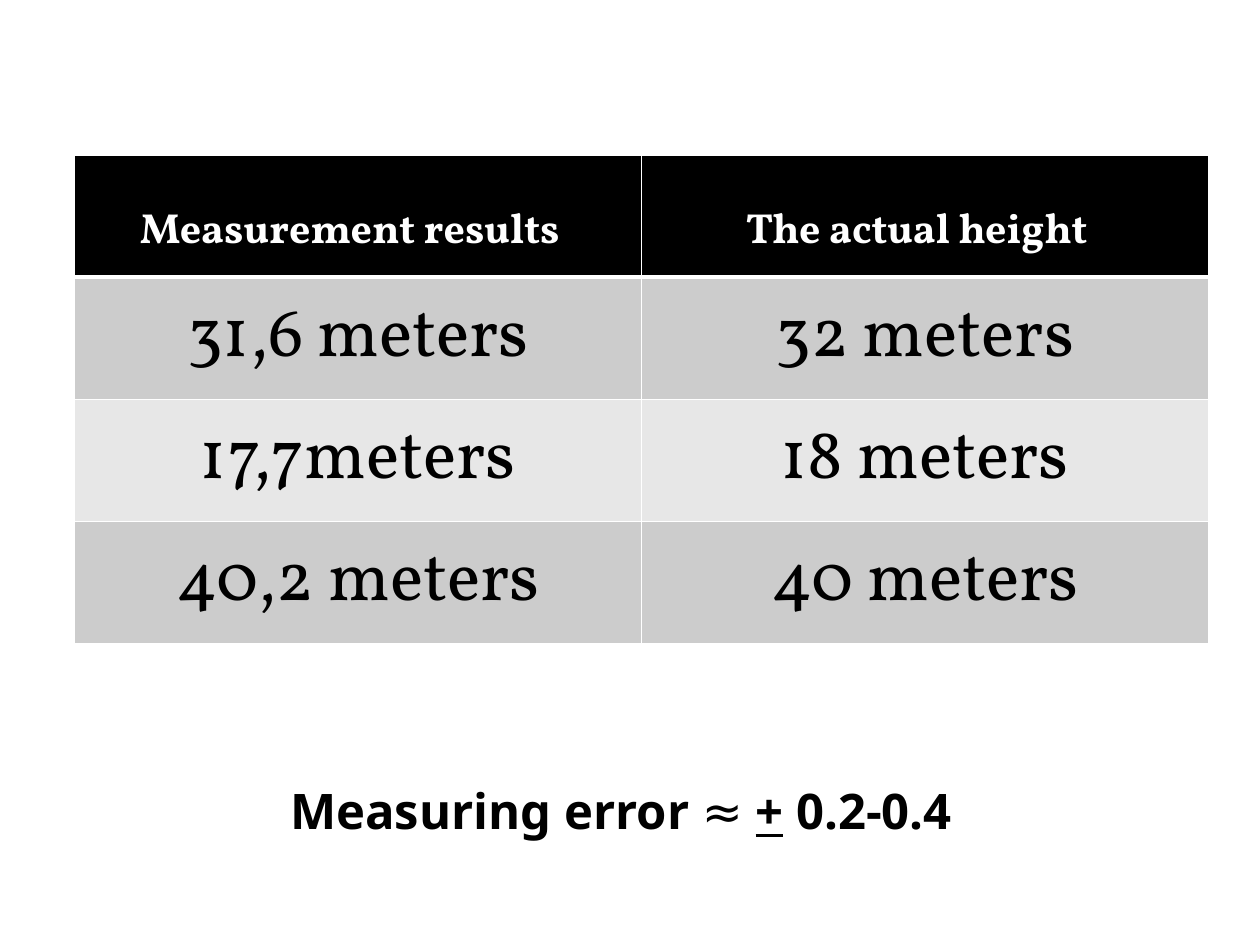
from lxml.etree import SubElement as Sub
from pptx import Presentation
from pptx.dml.color import RGBColor
from pptx.enum.text import MSO_ANCHOR as Anchor, PP_ALIGN as Align
from pptx.oxml.ns import qn
from pptx.util import Inches, Pt

# Content
ROWS = [
    ("Measurement results", "The actual height"),
    ("31,6 meters", "32 meters"),
    ("17,7meters", "18 meters"),
    ("40,2 meters", "40 meters"),
]
# text, bold, underline
ERROR = [
    ("Measuring error ", True, False),
    ("≈ ", False, False),
    ("+", True, True),
    (" 0.2-0.4", True, False),
]
HEAD, BANDS = "000000", ("CCCCCC", "E7E7E7")
COL, ROW = 4.5, 0.97


def color(code):
    return RGBColor.from_string(code)


def style(run, font, size, code, bold, under=False):
    run.font.name, run.font.size = font, Pt(size)
    run.font.bold, run.font.underline = bold, under
    run.font.color.rgb = color(code)


def edge(cell, side, width):
    line = Sub(cell._tc.get_or_add_tcPr(), qn("a:ln" + side), w=str(Pt(width)))
    fill = Sub(line, qn("a:solidFill"))
    Sub(fill, qn("a:srgbClr"), val="FFFFFF")


def dress(cell, text, row):
    head = row == 0
    # Borders come before the fill; a thick rule sits under the header
    for side in "LRTB":
        thick = (row, side) in ((0, "B"), (1, "T"))
        edge(cell, side, 3 if thick else 1)
    cell.fill.solid()
    cell.fill.fore_color.rgb = color(HEAD if head else BANDS[(row - 1) % 2])
    cell.text_frame.text = text
    cell.vertical_anchor = Anchor.TOP if head else Anchor.MIDDLE
    if head:
        cell.margin_top, cell.margin_right = Inches(0.39), Inches(0.23)
    par = cell.text_frame.paragraphs[0]
    par.alignment = Align.CENTER
    style(par.runs[0], "Vollkorn", 24 if head else 40,
          "FFFFFF" if head else "000000", head)


deck = Presentation()
deck.slide_width, deck.slide_height = Inches(10), Inches(7.5)
slide = deck.slides.add_slide(deck.slide_layouts[5])

# Title below the table
title = slide.shapes.title
title.left, title.top = Inches(0.43), Inches(5.8)
title.width, title.height = Inches(9), Inches(1.25)
title.text_frame.vertical_anchor = Anchor.MIDDLE
par = title.text_frame.paragraphs[0]
par.alignment = Align.CENTER
for text, bold, under in ERROR:
    run = par.add_run()
    run.text = text
    style(run, "Noto Sans", 28, "000000", bold, under)

# Table of heights
count, width = len(ROWS), len(ROWS[0])
table = slide.shapes.add_table(
    count, width, Inches(0.59), Inches(1.23),
    Inches(COL * width), Inches(ROW * count)).table
for col in table.columns:
    col.width = Inches(COL)
for r, texts in enumerate(ROWS):
    table.rows[r].height = Inches(ROW)
    for c, text in enumerate(texts):
        dress(table.cell(r, c), text, r)

deck.save("out.pptx")
